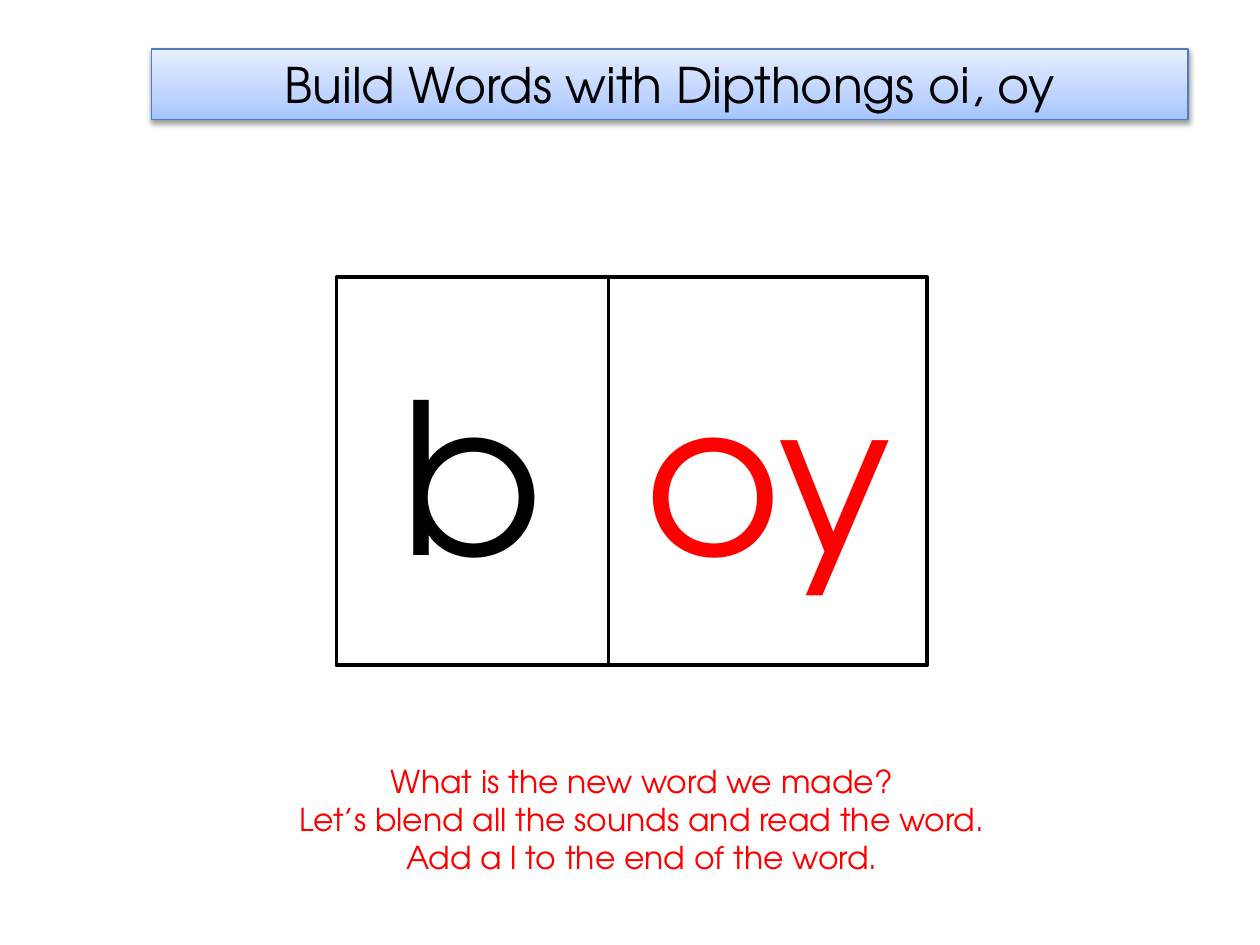
from copy import deepcopy
from dataclasses import dataclass

from lxml import etree
from pptx import Presentation
from pptx import util as u
from pptx.dml.color import RGBColor
from pptx.enum import shapes, text
from pptx.oxml import ns
from pptx.shapes.autoshape import Shape
from pptx.slide import Slide
from pptx.text.text import TextFrame

FONT = "TeX Gyre Adventor"
BLACK = RGBColor(0x00, 0x00, 0x00)
WHITE = RGBColor(0xFF, 0xFF, 0xFF)
RED = RGBColor(0xFF, 0x00, 0x00)
BLUE = RGBColor(0x4B, 0x7E, 0xBC)
STOPS = (
    (0, RGBColor(0xA4, 0xC4, 0xFF)),
    (0.35, RGBColor(0xBF, 0xD4, 0xFF)),
    (1, RGBColor(0xE6, 0xEE, 0xFF)),
)
TITLE = "Build Words with Dipthongs oi, oy"
PROMPTS = (
    "What is the new word we made?",
    "Let’s blend all the sounds and read the word.",
    "Add a l to the end of the word.",
)
LEFT, TOP, HEIGHT = 2.67, 2.2, 3.08


@dataclass
class Card:
    word: str
    width: float
    color: RGBColor


CARDS = (Card("b", 2.16, BLACK), Card("oy", 2.53, RED))


def write(frame: TextFrame, lines: tuple[str, ...], size: int, color: RGBColor) -> None:
    frame.word_wrap = True
    frame.text = "\n".join(lines)
    for para in frame.paragraphs:
        para.alignment = text.PP_ALIGN.CENTER
        para.font.name = FONT
        para.font.size = u.Pt(size)
        para.font.color.rgb = color


def add_box(slide: Slide, left: float, top: float, width: float, height: float,
            line: RGBColor, weight: float) -> Shape:
    box = slide.shapes.add_shape(
        shapes.MSO_SHAPE.RECTANGLE,
        u.Inches(left), u.Inches(top), u.Inches(width), u.Inches(height))
    box.shadow.inherit = False
    box.line.color.rgb = line
    box.line.width = u.Pt(weight)
    box.text_frame.vertical_anchor = text.MSO_ANCHOR.MIDDLE
    return box


def shade(box: Shape) -> None:
    """Fill the box with the three-stop gradient, running upwards."""
    box.fill.gradient()
    box.fill.gradient_angle = 90
    stops = box._element.spPr.find(".//" + ns.qn("a:gsLst"))
    stops.append(deepcopy(stops[-1]))
    for stop, (place, color) in zip(box.fill.gradient_stops, STOPS):
        stop.position = place
        stop.color.rgb = color


def drop_shadow(box: Shape) -> None:
    effects = box._element.spPr.find(ns.qn("a:effectLst"))
    shadow = etree.SubElement(
        effects, ns.qn("a:outerShdw"), blurRad=str(u.Pt(3.1)),
        dist=str(u.Pt(1.6)), dir="5400000", rotWithShape="0")
    color = etree.SubElement(shadow, ns.qn("a:srgbClr"), val=str(BLACK))
    etree.SubElement(color, ns.qn("a:alpha"), val="38000")


def add_title(slide: Slide) -> None:
    bar = add_box(slide, 1.2, 0.39, 8.23, 0.56, BLUE, 0.75)
    shade(bar)
    drop_shadow(bar)
    write(bar.text_frame, (TITLE,), 28, BLACK)


def add_cards(slide: Slide) -> None:
    left = LEFT
    for card in CARDS:
        box = add_box(slide, left, TOP, card.width, HEIGHT, BLACK, 2)
        box.fill.solid()
        box.fill.fore_color.rgb = WHITE
        write(box.text_frame, (card.word,), 120, card.color)
        left += card.width


def add_prompts(slide: Slide) -> None:
    box = slide.shapes.add_textbox(
        u.Inches(1.61), u.Inches(6), u.Inches(6.97), u.Inches(1.01))
    write(box.text_frame, PROMPTS, 18, RED)
    box.text_frame.auto_size = text.MSO_AUTO_SIZE.SHAPE_TO_FIT_TEXT


def main() -> None:
    deck = Presentation()
    deck.slide_width = u.Inches(10)
    deck.slide_height = u.Inches(7.5)
    slide = deck.slides.add_slide(deck.slide_layouts[6])
    add_title(slide)
    add_cards(slide)
    add_prompts(slide)
    deck.save("out.pptx")


if __name__ == "__main__":
    main()
